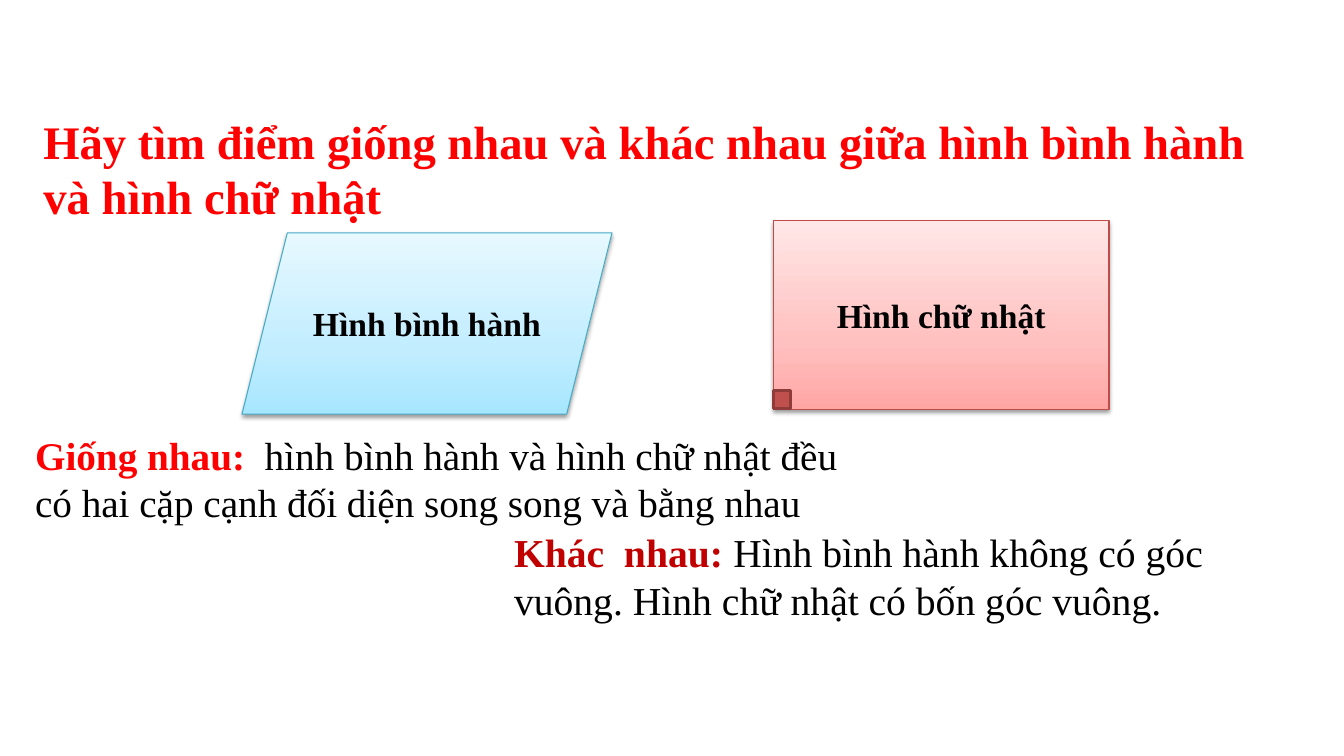
"""Builds a slide comparing a parallelogram with a rectangle."""
from lxml import etree
from pptx import Presentation
from pptx.dml.color import RGBColor
from pptx.enum.shapes import MSO_SHAPE
from pptx.enum.text import MSO_ANCHOR, MSO_AUTO_SIZE, PP_ALIGN
from pptx.oxml.ns import qn
from pptx.util import Inches, Pt

PARALLELOGRAM = MSO_SHAPE.PARALLELOGRAM
RECTANGLE = MSO_SHAPE.RECTANGLE
MIDDLE = MSO_ANCHOR.MIDDLE
BOTTOM = MSO_ANCHOR.BOTTOM
LEFT = PP_ALIGN.LEFT
CENTER = PP_ALIGN.CENTER
NO_AUTO_SIZE = MSO_AUTO_SIZE.NONE

FONT = "Times New Roman"
BLACK = RGBColor(0x00, 0x00, 0x00)
RED = RGBColor(0xFF, 0x00, 0x00)
DARK_RED = RGBColor(0xC0, 0x00, 0x00)
BLUE_LINE = RGBColor(0x46, 0xAA, 0xC5)
RED_LINE = RGBColor(0xBF, 0x4C, 0x48)
MARK_FILL = RGBColor(0xC0, 0x50, 0x4D)
MARK_LINE = RGBColor(0x8E, 0x3B, 0x39)
BLUES = (RGBColor(0xA7, 0xE6, 0xFF), RGBColor(0xC1, 0xED, 0xFF), RGBColor(0xE7, 0xF8, 0xFF))
PINKS = (RGBColor(0xFF, 0xA6, 0xA5), RGBColor(0xFF, 0xC0, 0xBF), RGBColor(0xFF, 0xE7, 0xE7))
STOPS = (0, 35, 100)


def add_run(paragraph, text, size=28, color=BLACK, bold=False):
    run = paragraph.add_run()
    run.text = text
    run.font.name = FONT
    run.font.size = Pt(size)
    run.font.color.rgb = color
    run.font.bold = bold


def add_color(parent, color, **attributes):
    element = etree.SubElement(parent, qn("a:srgbClr"), val=str(color))
    for name, value in attributes.items():
        etree.SubElement(element, qn(f"a:{name}"), val=str(value))


class ComparisonSlide:
    def __init__(self, presentation):
        self.slide = presentation.slides.add_slide(presentation.slide_layouts[5])

    def prepare_text(self, shape, anchor=MIDDLE, alignment=LEFT):
        frame = shape.text_frame
        frame.word_wrap = True
        frame.auto_size = NO_AUTO_SIZE
        frame.vertical_anchor = anchor
        paragraph = frame.paragraphs[0]
        paragraph.alignment = alignment
        return paragraph

    def title(self, text, left, top, width, height):
        title = self.slide.shapes.title
        title.left, title.top = Inches(left), Inches(top)
        title.width, title.height = Inches(width), Inches(height)
        add_run(self.prepare_text(title), text, size=33.3, color=RED, bold=True)

    def statement(self, label, text, left, top, width, height, size, color, anchor=MIDDLE):
        box = self.slide.shapes.add_textbox(
            Inches(left), Inches(top), Inches(width), Inches(height))
        paragraph = self.prepare_text(box, anchor)
        add_run(paragraph, label, size=size, color=color, bold=True)
        add_run(paragraph, text, size=size)

    def outline(self, kind, left, top, width, height, line_color, line_width):
        shape = self.slide.shapes.add_shape(
            kind, Inches(left), Inches(top), Inches(width), Inches(height))
        shape.shadow.inherit = False
        shape.line.color.rgb = line_color
        shape.line.width = Pt(line_width)
        return shape

    def figure(self, kind, text, left, top, width, height, colors, line_color):
        shape = self.outline(kind, left, top, width, height, line_color, 0.75)
        shape.fill.gradient()
        shape.fill.gradient_angle = 90
        properties = shape.element.spPr
        stops = properties.find(qn("a:gradFill")).find(qn("a:gsLst"))
        for stop in list(stops):
            stops.remove(stop)
        for position, color in zip(STOPS, colors):
            add_color(etree.SubElement(stops, qn("a:gs"), pos=str(position * 1000)), color)
        shadow = etree.SubElement(
            properties.find(qn("a:effectLst")), qn("a:outerShdw"),
            blurRad=str(Pt(3.1)), dist=str(Pt(1.6)), dir="5400000", rotWithShape="0")
        add_color(shadow, BLACK, alpha=38000)
        add_run(self.prepare_text(shape, alignment=CENTER), text, size=24, bold=True)

    def corner_mark(self, left, top, width, height):
        mark = self.outline(RECTANGLE, left, top, width, height, MARK_LINE, 2)
        mark.fill.solid()
        mark.fill.fore_color.rgb = MARK_FILL


def main():
    presentation = Presentation()
    presentation.slide_width = Inches(13.33)
    presentation.slide_height = Inches(7.5)
    comparison = ComparisonSlide(presentation)
    comparison.title(
        "Hãy tìm điểm giống nhau và khác nhau giữa hình bình hành và hình chữ nhật",
        0.33, 1.12, 12.67, 1.1)
    comparison.figure(
        PARALLELOGRAM, "Hình bình hành", 2.4, 2.31, 3.67, 1.8, BLUES, BLUE_LINE)
    comparison.figure(RECTANGLE, "Hình chữ nhật", 7.67, 2.19, 3.33, 1.87, PINKS, RED_LINE)
    comparison.corner_mark(7.67, 3.87, 0.17, 0.18)
    comparison.statement(
        "Giống nhau:  ",
        "hình bình hành và hình chữ nhật đều có hai cặp cạnh đối diện song song và bằng nhau",
        0.25, 4.12, 8.23, 1.25, 28, RED)
    comparison.statement(
        "Khác  nhau: ", "Hình bình hành không có góc vuông. Hình chữ nhật có bốn góc vuông.",
        5, 5.24, 8.17, 0.99, 28.3, DARK_RED, BOTTOM)
    presentation.save("out.pptx")


if __name__ == "__main__":
    main()
